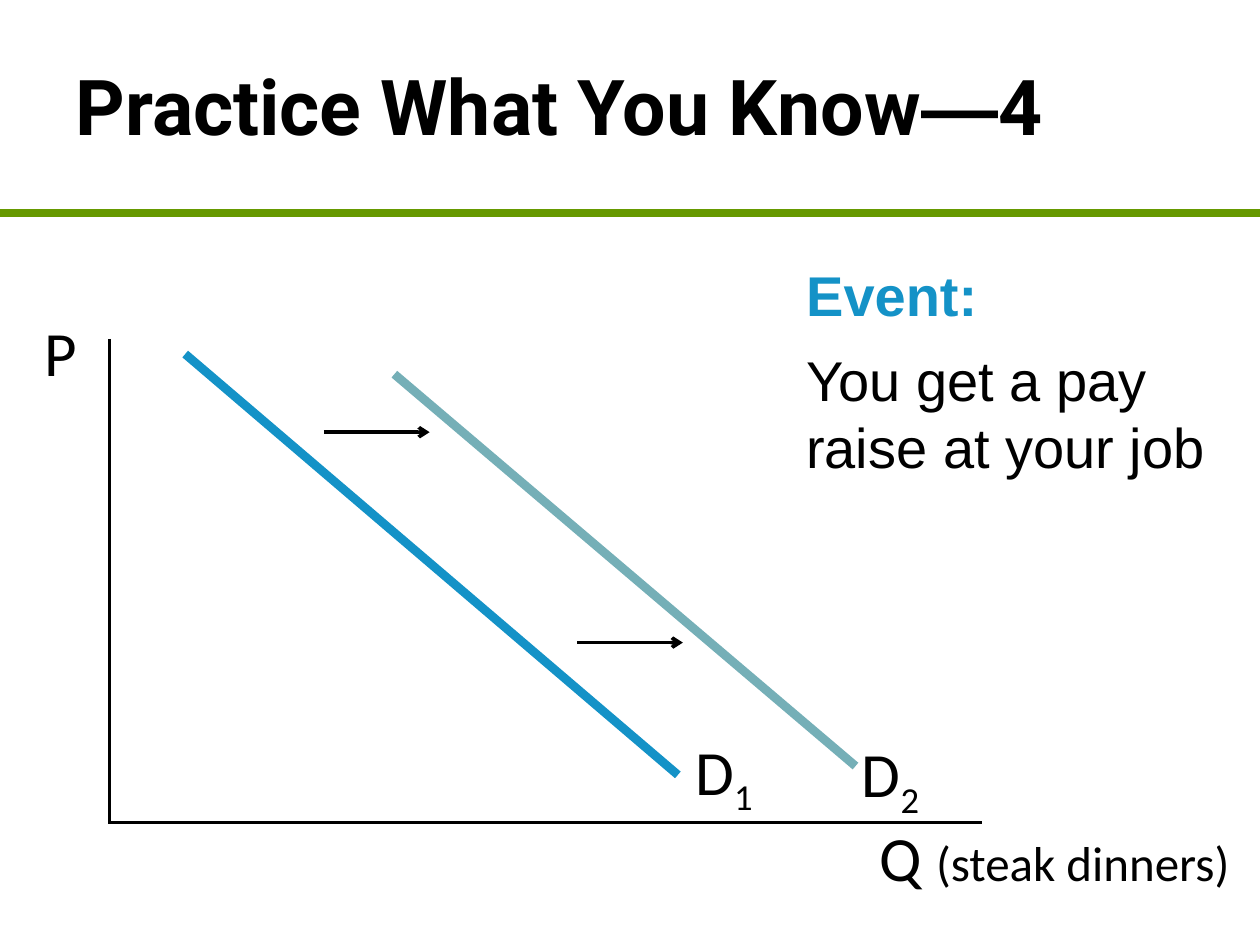
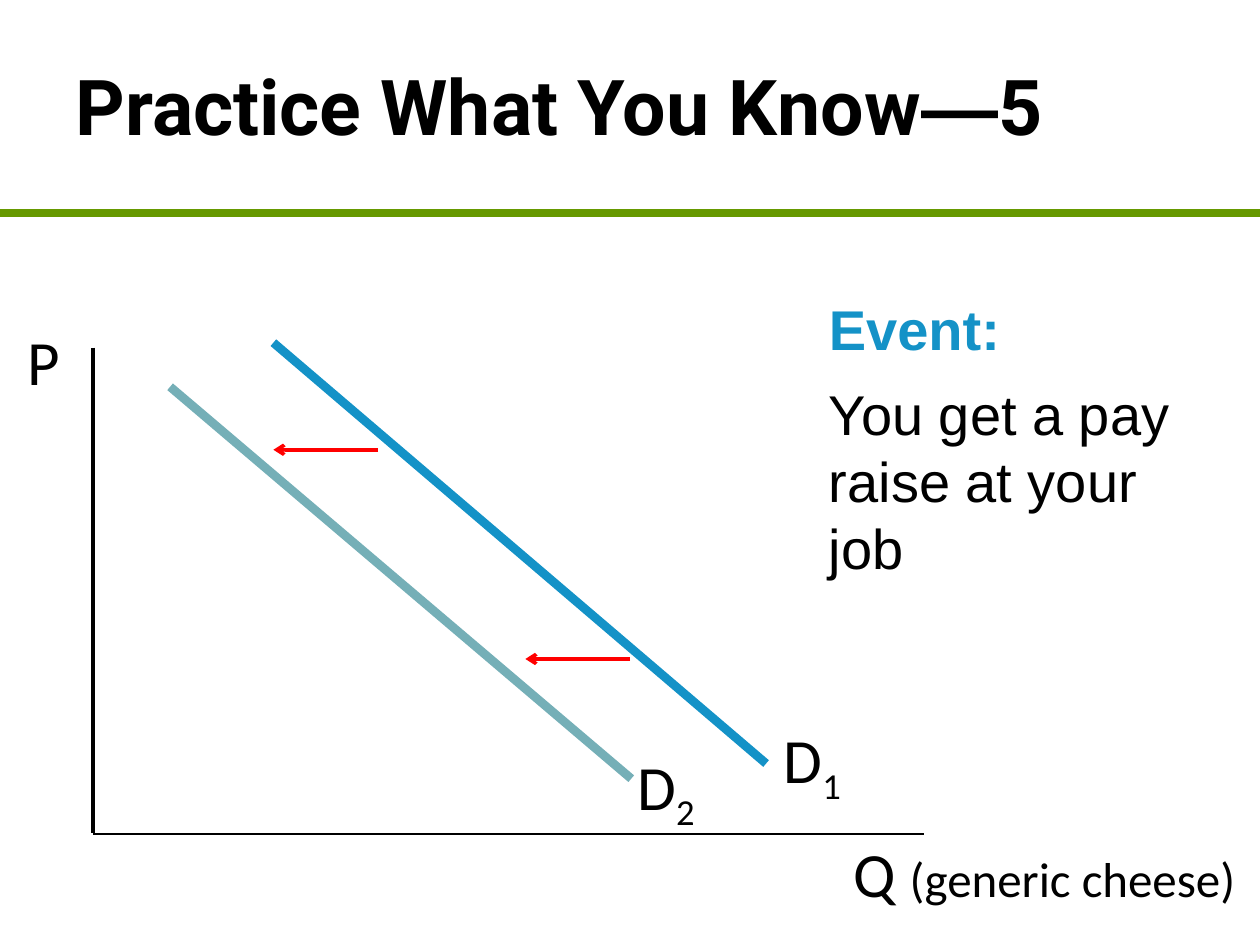
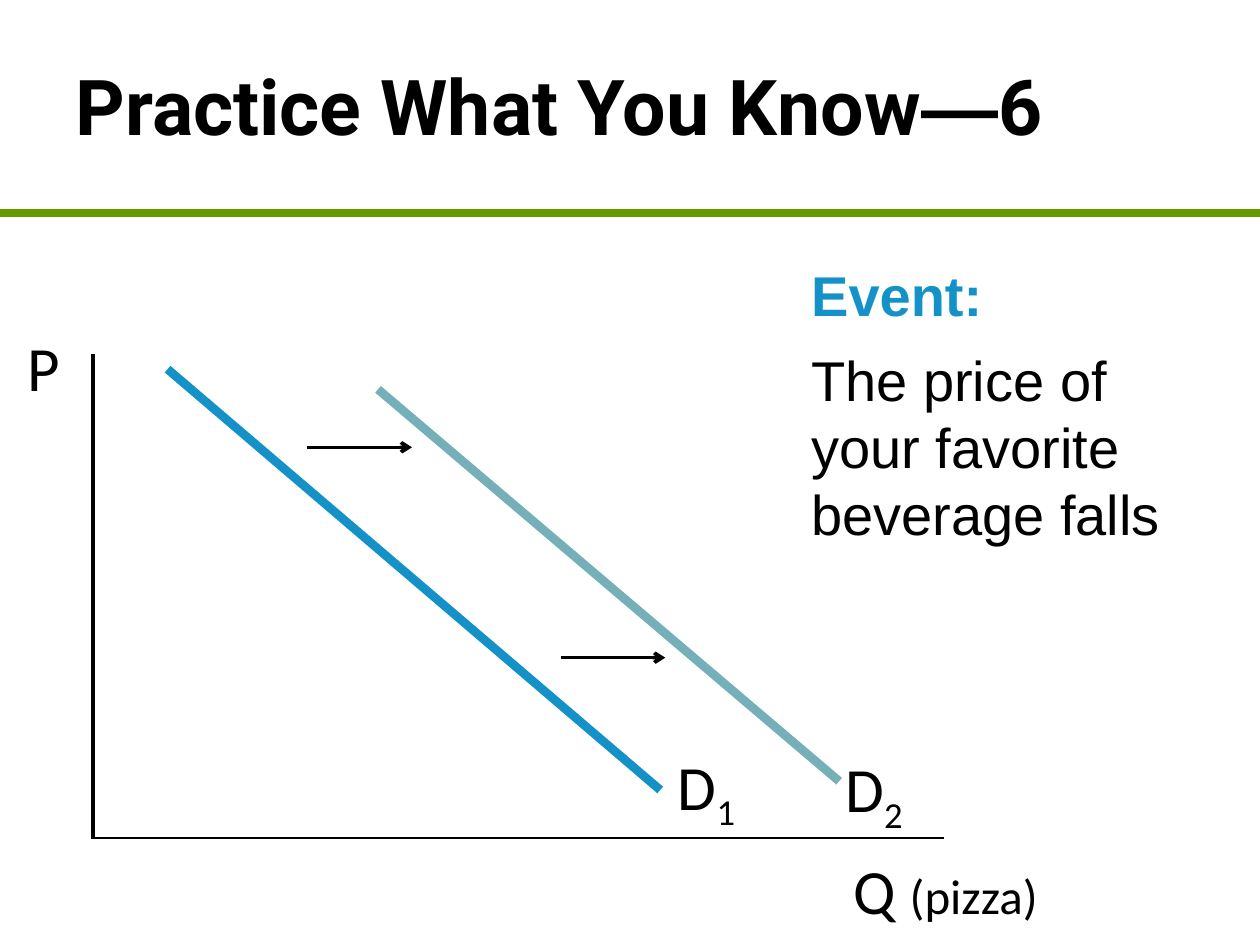
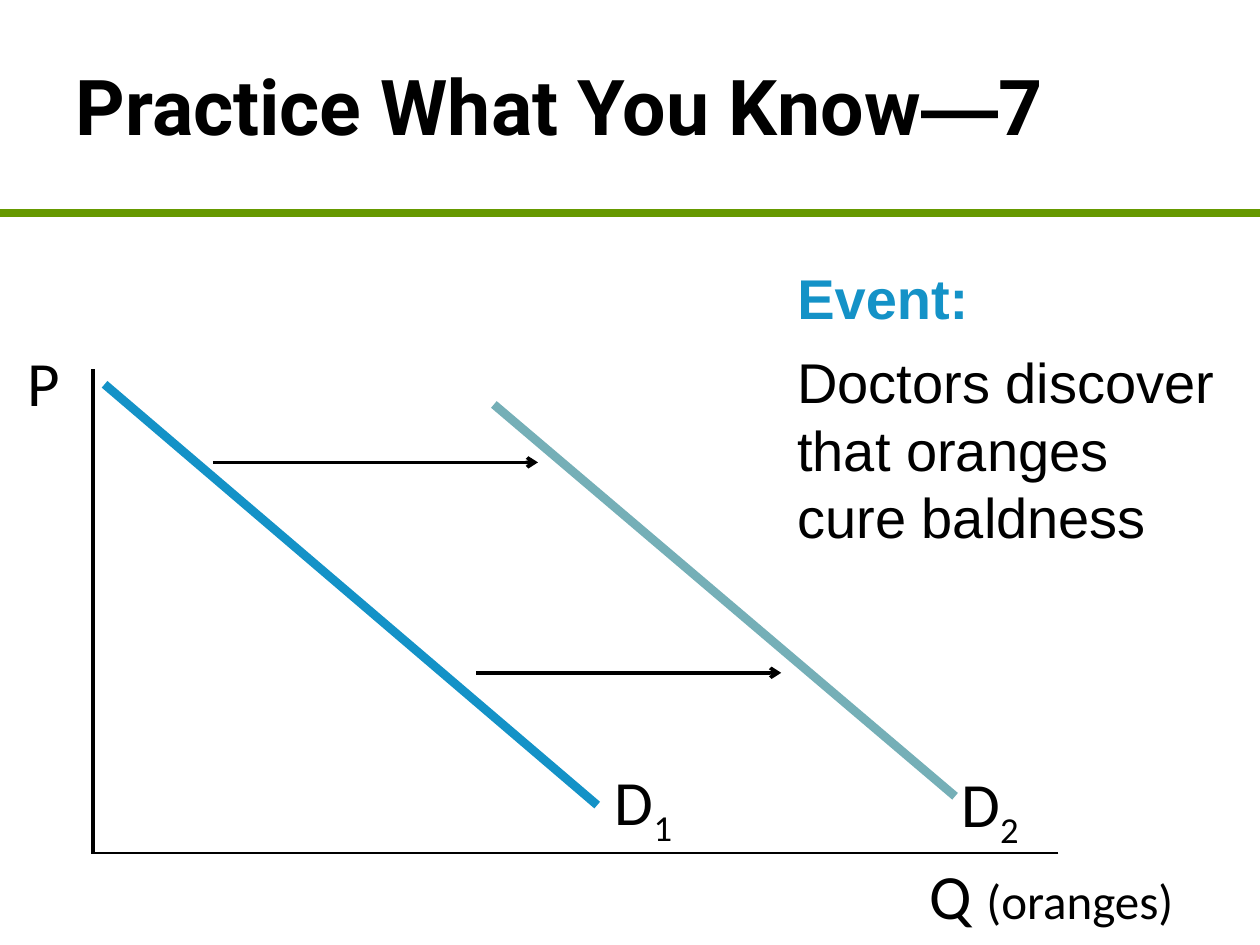
from dataclasses import dataclass, field
from typing import Any, NamedTuple

from lxml import etree
from pptx import Presentation
from pptx.dml.color import RGBColor
from pptx.enum.shapes import MSO_CONNECTOR
from pptx.enum.text import MSO_ANCHOR
from pptx.oxml.ns import qn
from pptx.util import Inches, Pt

STRAIGHT = MSO_CONNECTOR.STRAIGHT
TOP, MIDDLE = MSO_ANCHOR.TOP, MSO_ANCHOR.MIDDLE

# The slide is a grid of square cells; every position below counts cells.
COLUMNS, ROWS = 100, 75
SLIDE_WIDTH, SLIDE_HEIGHT = Inches(10), Inches(7.5)


class Point(NamedTuple):
    column: float
    row: float

    def shifted(self, columns: float, rows: float) -> "Point":
        return Point(self.column + columns, self.row + rows)


class Area(NamedTuple):
    column: float
    row: float
    columns: float
    rows: float


class Stroke(NamedTuple):
    color: RGBColor
    width: float
    arrow: bool = False


class Span(NamedTuple):
    text: str
    style: dict[str, Any]
    color: RGBColor
    baseline: int = 0


class Arrow(NamedTuple):
    start: Point
    columns: float


@dataclass(frozen=True)
class Theme:
    black: RGBColor = RGBColor(0x00, 0x00, 0x00)
    green: RGBColor = RGBColor(0x66, 0x99, 0x00)
    blue: RGBColor = RGBColor(0x14, 0x92, 0xC7)
    teal: RGBColor = RGBColor(0x75, 0xAF, 0xB7)
    red: RGBColor = RGBColor(0xFF, 0x00, 0x00)
    title: dict[str, Any] = field(
        default_factory=lambda: {"name": "Roboto", "size": Pt(44), "bold": True})
    dash: dict[str, Any] = field(
        default_factory=lambda: {"name": "Arial", "size": Pt(44), "bold": True})
    heading: dict[str, Any] = field(
        default_factory=lambda: {"name": "Arial", "size": Pt(32), "bold": True})
    body: dict[str, Any] = field(
        default_factory=lambda: {"name": "Arial", "size": Pt(32), "bold": False})
    label: dict[str, Any] = field(
        default_factory=lambda: {"name": "Calibri", "size": Pt(36)})
    good: dict[str, Any] = field(
        default_factory=lambda: {"name": "Calibri", "size": Pt(28)})
    space_after: Pt = Pt(10)


THEME = Theme()
WIDE_INSETS = (0.1, 0.05)
TIGHT_INSETS = (0.05, 0.02)

TITLE_AREA = Area(5, 0, 90, 16.7)
RULE_ROW = 16.9
AXIS_ROWS = 38.5
FIRST_CURVE = Point(39.1, 33.4)
SECOND_CURVE = Point(36.6, 31.1)


@dataclass(frozen=True)
class Exercise:
    """One demand shift: where its axes, curves, arrows and texts stand."""
    number: int
    good: str
    event: str
    event_area: Area
    axis_top: Point
    quantity_end: Point
    quantity_area: Area
    first_start: Point
    second_start: Point
    arrows: tuple[Arrow, ...]
    arrow_color: RGBColor = THEME.black


EXERCISES = (
    Exercise(4, "steak dinners", "You get a pay raise at your job",
             Area(63, 20.2, 35.2, 25), Point(8.7, 26.9), Point(77.9, 65.3),
             Area(69.3, 64.8, 30.7, 6), Point(14.7, 28.1), Point(31.3, 29.7),
             (Arrow(Point(45.8, 51), 8.4), Arrow(Point(25.7, 34.3), 8.4))),
    Exercise(5, "generic cheese", "You get a pay raise at your job",
             Area(64.8, 22.9, 32.1, 26.7), Point(7.4, 27.6), Point(73.3, 66.2),
             Area(67.2, 66, 32.8, 5.5), Point(21.7, 27.2), Point(13.5, 30.7),
             (Arrow(Point(50, 52.3), -8.3), Arrow(Point(30, 35.7), -8.3)),
             THEME.red),
    Exercise(6, "pizza", "The price of your favorite beverage falls",
             Area(63.4, 20.2, 32.3, 25), Point(7.4, 28.1), Point(74.9, 66.5),
             Area(67.2, 67.4, 19.8, 4.7), Point(13.3, 29.3), Point(30, 30.9),
             (Arrow(Point(44.5, 52.2), 8.3), Arrow(Point(24.4, 35.5), 8.3))),
    Exercise(7, "oranges", "Doctors discover that oranges cure baldness",
             Area(62.3, 20.4, 35.6, 30), Point(7.4, 29.3), Point(84, 67.7),
             Area(73.3, 67.8, 26.7, 3.8), Point(8.3, 30.5), Point(39.2, 32.1),
             (Arrow(Point(37.8, 53.4), 24.2), Arrow(Point(16.9, 36.7), 25.8))),
)


def across(columns: float) -> int:
    return round(SLIDE_WIDTH * columns / COLUMNS)


def down(rows: float) -> int:
    return round(SLIDE_HEIGHT * rows / ROWS)


def draw_line(page: Any, start: Point, end: Point, stroke: Stroke) -> None:
    line = page.shapes.add_connector(STRAIGHT, across(start.column), down(start.row),
                                     across(end.column), down(end.row))
    line.line.color.rgb = stroke.color
    line.line.width = Pt(stroke.width)
    properties = line._element.spPr
    if stroke.arrow:
        etree.SubElement(properties.find(qn("a:ln")), qn("a:tailEnd"), type="arrow")
    etree.SubElement(properties, qn("a:effectLst"))


def write_text(page: Any, area: Area, paragraphs: list[list[Span]],
               insets: tuple[float, float] = TIGHT_INSETS,
               anchor: Any = TOP, space_after: Pt = THEME.space_after) -> None:
    box = page.shapes.add_textbox(across(area.column), down(area.row),
                                  across(area.columns), down(area.rows))
    frame = box.text_frame
    side, edge = map(Inches, insets)
    settings = {"word_wrap": True, "vertical_anchor": anchor,
                "margin_left": side, "margin_right": side,
                "margin_top": edge, "margin_bottom": edge}
    for name, value in settings.items():
        setattr(frame, name, value)
    for index, spans in enumerate(paragraphs):
        para = frame.add_paragraph() if index else frame.paragraphs[0]
        para.space_after = space_after
        for span in spans:
            run = para.add_run()
            run.text = span.text
            for name, value in span.style.items():
                setattr(run.font, name, value)
            run.font.color.rgb = span.color
            if span.baseline:
                run.font._element.set("baseline", str(span.baseline))


def draw_header(page: Any, number: int) -> None:
    draw_line(page, Point(0, RULE_ROW), Point(COLUMNS, RULE_ROW),
              Stroke(THEME.green, 4.5))
    title = [Span("Practice What You Know", THEME.title, THEME.black),
             Span("—", THEME.dash, THEME.black),
             Span(str(number), THEME.title, THEME.black)]
    write_text(page, TITLE_AREA, [title], WIDE_INSETS, MIDDLE, Pt(0))


def draw_axes(page: Any, exercise: Exercise) -> None:
    top = exercise.axis_top
    draw_line(page, top, top.shifted(0, AXIS_ROWS), Stroke(THEME.black, 2))
    draw_line(page, exercise.quantity_end,
              Point(top.column, exercise.quantity_end.row), Stroke(THEME.black, 1.5))
    write_text(page, Area(*top.shifted(-5.7, -2.2), 6.1, 4.4),
               [[Span("P", THEME.label, THEME.black)]])
    write_text(page, exercise.quantity_area,
               [[Span("Q ", THEME.label, THEME.black),
                 Span(f"({exercise.good})", THEME.good, THEME.black)]])


def draw_curve(page: Any, start: Point, extent: Point, color: RGBColor,
               index: int, label_shift: Point) -> None:
    """Draw a demand curve and its subscripted name beside the lower end."""
    end = start.shifted(*extent)
    draw_line(page, start, end, Stroke(color, 5))
    write_text(page, Area(*end.shifted(*label_shift), 10, 6.9),
               [[Span("D", THEME.label, THEME.black),
                 Span(str(index), THEME.label, THEME.black, -25000)]])


def draw_exercise(page: Any, exercise: Exercise) -> None:
    draw_header(page, exercise.number)
    draw_axes(page, exercise)
    draw_curve(page, exercise.first_start, FIRST_CURVE, THEME.blue, 1, Point(0.9, -3.6))
    for arrow in exercise.arrows:
        draw_line(page, arrow.start, arrow.start.shifted(arrow.columns, 0),
                  Stroke(exercise.arrow_color, 2, arrow=True))
    draw_curve(page, exercise.second_start, SECOND_CURVE, THEME.teal, 2, Point(0, -2.7))
    write_text(page, exercise.event_area,
               [[Span("Event:", THEME.heading, THEME.blue)],
                [Span(exercise.event, THEME.body, THEME.black)]], WIDE_INSETS)


def main() -> None:
    deck = Presentation()
    deck.slide_width, deck.slide_height = SLIDE_WIDTH, SLIDE_HEIGHT
    blank = deck.slide_layouts[6]
    for exercise in EXERCISES:
        draw_exercise(deck.slides.add_slide(blank), exercise)
    deck.save("out.pptx")


if __name__ == "__main__":
    main()
